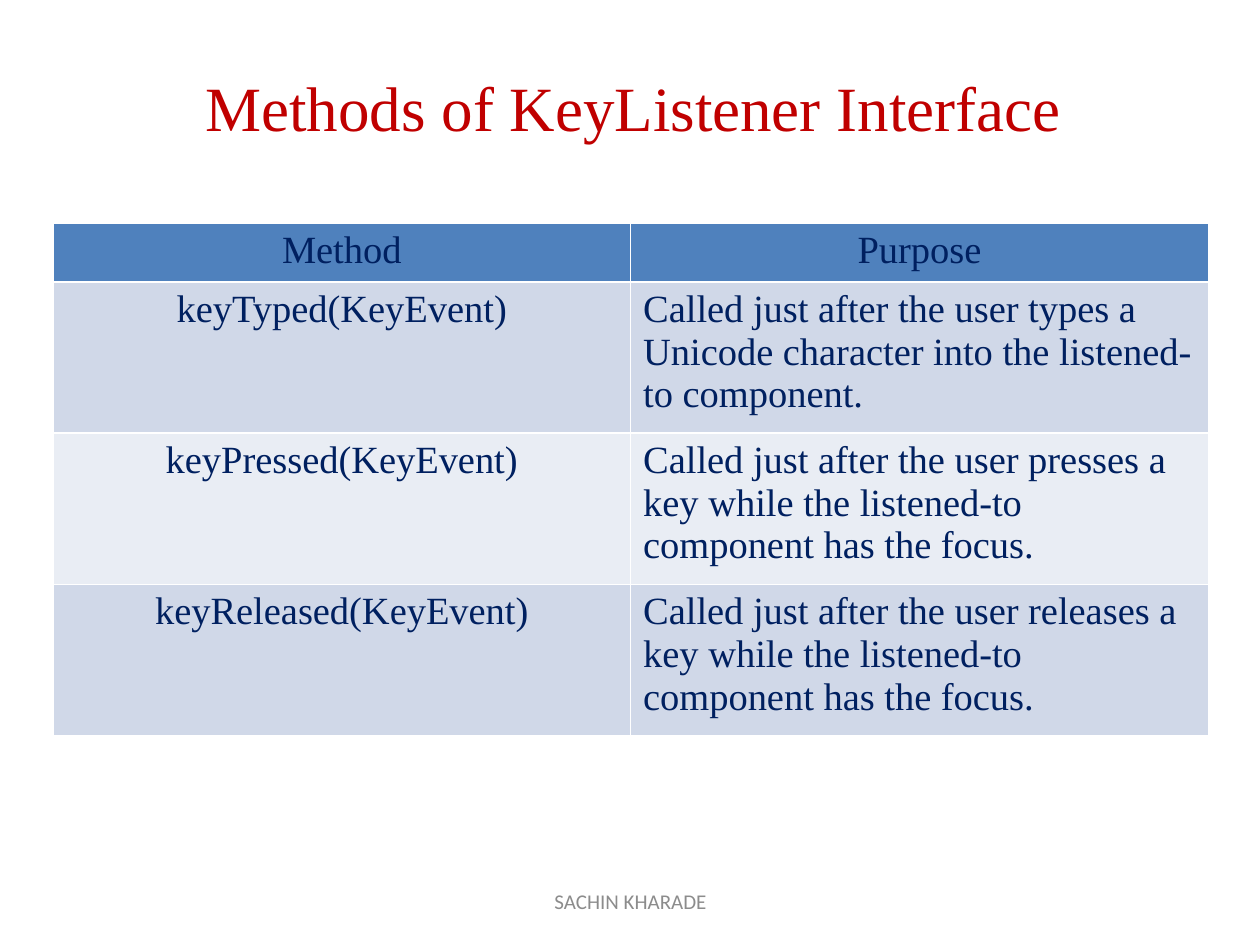
from pptx import Presentation
from pptx.dml.color import RGBColor
from pptx.enum.text import MSO_ANCHOR, PP_ALIGN
from pptx.util import Inches, Pt

RED = RGBColor(0xC0, 0x00, 0x00)
NAVY = RGBColor(0x00, 0x20, 0x60)
GRAY = RGBColor(0x8C, 0x8C, 0x8C)
HEADER_BLUE = RGBColor(0x4F, 0x81, 0xBD)
BAND_DARK = RGBColor(0xD0, 0xD8, 0xE8)
BAND_LIGHT = RGBColor(0xE9, 0xED, 0xF4)

TITLE_FORMAT = {"name": "Times New Roman", "size": Pt(36)}
TABLE_FORMAT = {"name": "Times New Roman", "size": Pt(22), "bold": False}
FOOTER_FORMAT = {"name": "Calibri", "size": Pt(12)}

ROWS = [
    ("Method", "Purpose"),
    ("keyTyped(KeyEvent)",
     "Called just after the user types a Unicode character into the listened-to component."),
    ("keyPressed(KeyEvent)",
     "Called just after the user presses a key while the listened-to component has the focus."),
    ("keyReleased(KeyEvent)",
     "Called just after the user releases a key while the listened-to component has the focus."),
]
ROW_FILLS = [HEADER_BLUE, BAND_DARK, BAND_LIGHT, BAND_DARK]


def write_text(frame, text, font_format, color, alignment):
    para = frame.paragraphs[0]
    para.alignment = alignment
    span = para.add_run()
    span.text = text
    for name, value in font_format.items():
        setattr(span.font, name, value)
    span.font.color.rgb = color


def add_centred_box(page, bounds, text, font_format, color):
    box = page.shapes.add_textbox(*(Inches(value) for value in bounds))
    box.text_frame.word_wrap = True
    box.text_frame.vertical_anchor = MSO_ANCHOR.MIDDLE
    write_text(box.text_frame, text, font_format, color, PP_ALIGN.CENTER)


deck = Presentation()
deck.slide_width, deck.slide_height = Inches(10), Inches(7.5)
page = deck.slides.add_slide(deck.slide_layouts[6])

add_centred_box(page, (0.55, 0.27, 8.95, 1.15), "Methods of KeyListener Interface",
                TITLE_FORMAT, RED)

# The rows grow to fit their text; the default table style draws the white rules.
table = page.shapes.add_table(len(ROWS), 2, Inches(0.42), Inches(1.77),
                              Inches(9.17), Inches(0.41 * len(ROWS))).table
for row_index, (texts, fill) in enumerate(zip(ROWS, ROW_FILLS)):
    for column_index, text in enumerate(texts):
        cell = table.cell(row_index, column_index)
        cell.fill.solid()
        cell.fill.fore_color.rgb = fill
        is_purpose = row_index > 0 and column_index == 1
        alignment = PP_ALIGN.LEFT if is_purpose else PP_ALIGN.CENTER
        write_text(cell.text_frame, text, TABLE_FORMAT, NAVY, alignment)

add_centred_box(page, (3.42, 6.95, 3.17, 0.4), "SACHIN KHARADE", FOOTER_FORMAT, GRAY)

deck.save("out.pptx")
